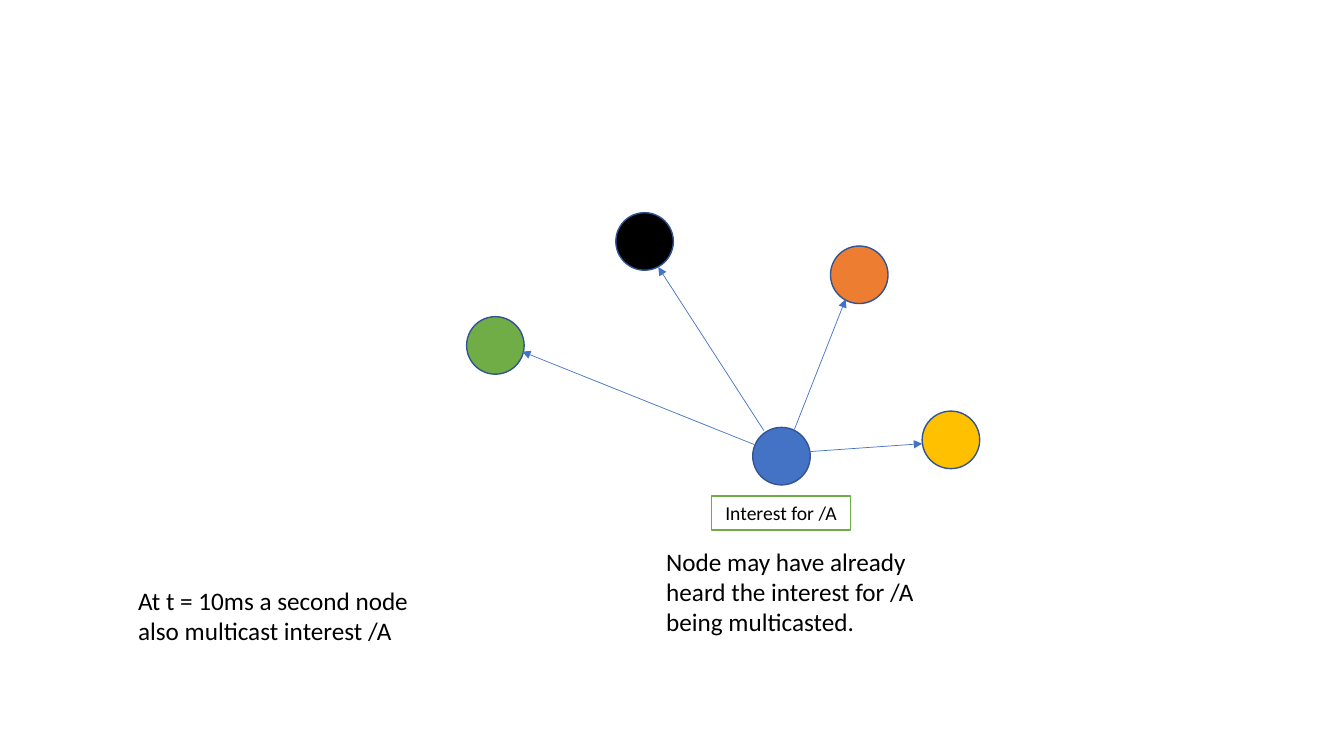
from lxml import etree
from pptx import Presentation
from pptx import util as u
from pptx.dml.color import RGBColor
from pptx.enum import shapes, text
from pptx.oxml import ns

BLACK = RGBColor(0x00, 0x00, 0x00)
WHITE = RGBColor(0xFF, 0xFF, 0xFF)
BLUE = RGBColor(0x44, 0x72, 0xC4)
NAVY = RGBColor(0x32, 0x54, 0x91)
GREEN = RGBColor(0x70, 0xAD, 0x47)
ORANGE = RGBColor(0xED, 0x7D, 0x31)
YELLOW = RGBColor(0xFF, 0xC0, 0x00)

NODES = [
    (11.76, 7.98, GREEN),
    (23.24, 10.36, YELLOW),
    (15.52, 5.36, BLACK),
    (20.93, 6.2, ORANGE),
    (18.97, 10.77, BLUE),
]
MULTICASTS = [
    (19, 11.2, 13.16, 8.86),
    (19.25, 10.85, 16.59, 6.73),
    (20.02, 10.82, 21.31, 7.54),
    (20.4, 11.38, 23.24, 11.18),
]


def write(shape, words, size=18, align=text.PP_ALIGN.LEFT, color=BLACK, font="Calibri"):
    """Put one wrapped paragraph into a shape that grows with its text."""
    frame = shape.text_frame
    frame.word_wrap = True
    frame.auto_size = text.MSO_AUTO_SIZE.SHAPE_TO_FIT_TEXT
    para = frame.paragraphs[0]
    para.alignment = align
    span = para.add_run()
    span.text = words
    span.font.name = font
    span.font.size = u.Pt(size)
    span.font.color.rgb = color


class NetworkPage:
    """Draws network elements on one page; all lengths are in centimetres."""

    node_size = 1.45
    outline = u.Pt(1)
    arrow_width = u.Pt(0.5)

    def __init__(self, page):
        self.page = page

    def shape(self, kind, box, fill, line):
        shape = self.page.shapes.add_shape(kind, *map(u.Cm, box))
        shape.shadow.inherit = False
        shape.fill.solid()
        shape.fill.fore_color.rgb = fill
        shape.line.color.rgb = line
        shape.line.width = self.outline
        return shape

    def node(self, left, top, fill):
        box = (left, top, self.node_size, self.node_size)
        self.shape(shapes.MSO_SHAPE.OVAL, box, fill, NAVY)

    def arrow(self, *ends):
        arrow = self.page.shapes.add_connector(
            shapes.MSO_CONNECTOR.STRAIGHT, *map(u.Cm, ends))
        arrow.line.color.rgb = BLUE
        arrow.line.width = self.arrow_width
        etree.SubElement(arrow.line._get_or_add_ln(), ns.qn("a:tailEnd"), type="triangle")
        etree.SubElement(arrow._element.spPr, ns.qn("a:effectLst"))

    def label(self, words, *box):
        label = self.shape(shapes.MSO_SHAPE.RECTANGLE, box, WHITE, GREEN)
        write(label, words, size=14, align=text.PP_ALIGN.CENTER)

    def caption(self, words, *box):
        write(self.page.shapes.add_textbox(*map(u.Cm, box)), words)


def main():
    deck = Presentation()
    deck.slide_width, deck.slide_height = u.Cm(33.87), u.Cm(19.05)
    network = NetworkPage(deck.slides.add_slide(deck.slide_layouts[6]))
    for node in NODES:
        network.node(*node)
    for ends in MULTICASTS:
        network.arrow(*ends)
    network.label("Interest for /A", 17.93, 12.5, 3.51, 0.86)
    network.caption("At t = 10ms a second node also multicast interest /A",
                    3.23, 14.63, 7.62, 1.8)
    network.caption("Node may have already heard the interest for /A being multicasted.",
                    16.54, 13.64, 7.62, 2.57)
    deck.save("out.pptx")


if __name__ == "__main__":
    main()
